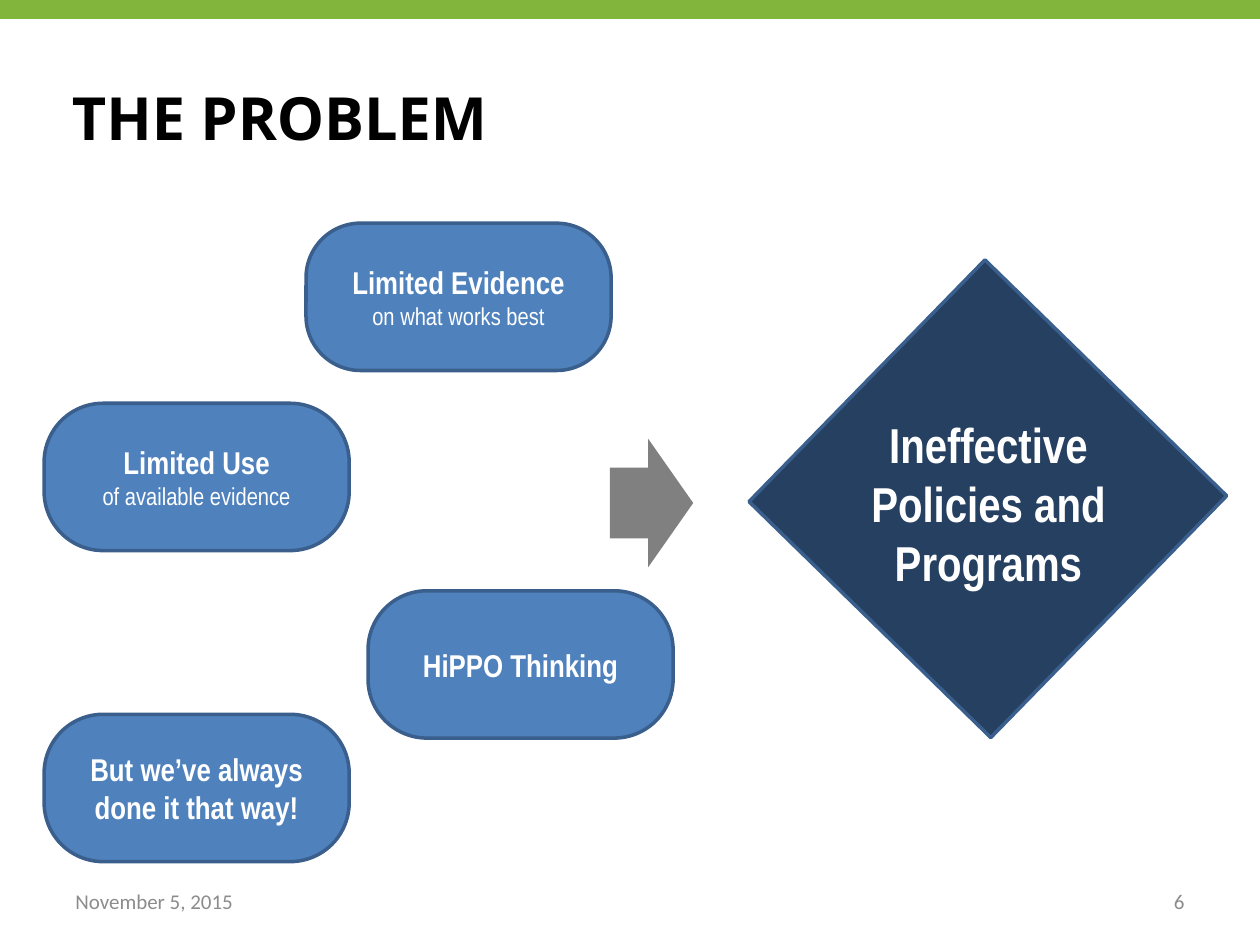
from pptx import Presentation
from pptx.dml.color import RGBColor
from pptx.enum.shapes import MSO_SHAPE
from pptx.enum.text import MSO_ANCHOR, PP_ALIGN
from pptx.util import Cm, Pt

RECTANGLE = MSO_SHAPE.RECTANGLE
ROUNDED = MSO_SHAPE.ROUNDED_RECTANGLE
DOWN_ARROW = MSO_SHAPE.DOWN_ARROW
LEFT, CENTER, RIGHT = PP_ALIGN.LEFT, PP_ALIGN.CENTER, PP_ALIGN.RIGHT
TOP, MIDDLE = MSO_ANCHOR.TOP, MSO_ANCHOR.MIDDLE

GREEN, BLUE, NAVY, OUTLINE = "81B53C", "4F81BD", "254061", "3A5F8C"
WHITE, BLACK, GRAY, FOOTER_GRAY = "FFFFFF", "000000", "808080", "8C8C8C"
NARROW = "Arial Narrow"

# All lengths are in centimetres.
SLIDE_SIZE = (25.4, 19.05)
CAUSE_SIZE = (6.15, 2.97)
# heading, detail, left, top, corner rounding
CAUSES = [
    ("Limited Evidence", "on what works best", 6.17, 4.5, 0.37),
    ("Limited Use", "of available evidence", 0.89, 8.13, 0.4),
    ("HiPPO Thinking", None, 7.42, 11.91, 0.4),
    ("But we’ve always done it that way!", None, 0.89, 14.4, 0.4),
]
RESULT = "Ineffective Policies and Programs"
# text, left, alignment
FOOTERS = [("November 5, 2015", 1.27, LEFT), ("6", 18.21, RIGHT)]


def rgb(color):
    return RGBColor.from_string(color)


def add_figure(slide, kind, box, fill, line=None):
    shape = slide.shapes.add_shape(kind, *map(Cm, box))
    shape.shadow.inherit = False
    shape.fill.solid()
    shape.fill.fore_color.rgb = rgb(fill)
    if line:
        shape.line.color.rgb = rgb(line)
        shape.line.width = Pt(2)
    else:
        shape.line.fill.background()
    return shape


def write(shape, lines, font, color, align, anchor=MIDDLE):
    """Fill a shape with one paragraph for each (text, size, bold) line."""
    frame = shape.text_frame
    frame.word_wrap = True
    frame.vertical_anchor = anchor
    for index, (text, size, bold) in enumerate(lines):
        paragraph = frame.add_paragraph() if index else frame.paragraphs[0]
        paragraph.alignment = align
        run = paragraph.add_run()
        run.text = text
        run.font.name = font
        run.font.size = Pt(size)
        run.font.bold = bold
        run.font.color.rgb = rgb(color)


def add_text(slide, box, *text_format):
    write(slide.shapes.add_textbox(*map(Cm, box)), *text_format)


def add_title(slide):
    title = slide.shapes.title
    title.left, title.top, title.width, title.height = map(Cm, (1.27, 0.76, 22.86, 3.18))
    frame = title.text_frame
    frame.margin_left = frame.margin_right = Cm(0.18)
    frame.margin_top = frame.margin_bottom = Cm(0.1)
    write(title, [("THE PROBLEM", 34, True)], "Open Sans", BLACK, LEFT)


def add_cause(slide, heading, detail, left, top, rounding):
    shape = add_figure(slide, ROUNDED, (left, top, *CAUSE_SIZE), BLUE, OUTLINE)
    shape.adjustments[0] = rounding
    lines = [(heading, 18, True)]
    if detail:
        lines.append((detail, 14, False))
    write(shape, lines, NARROW, WHITE, CENTER)


def main():
    presentation = Presentation()
    presentation.slide_width, presentation.slide_height = map(Cm, SLIDE_SIZE)
    slide = presentation.slides.add_slide(presentation.slide_layouts[5])

    add_figure(slide, RECTANGLE, (0, 0, SLIDE_SIZE[0], 0.38), GREEN)
    add_title(slide)
    for text, left, align in FOOTERS:
        add_text(slide, (left, 17.65, 5.92, 1.02), [(text, 12, False)],
                 "Calibri", FOOTER_GRAY, align)

    for cause in CAUSES:
        add_cause(slide, *cause)

    diamond = add_figure(slide, RECTANGLE, (16.51, 6.65, 6.81, 6.81), NAVY, OUTLINE)
    diamond.rotation = 44.3
    add_text(slide, (16.79, 8.23, 6.27, 3.84), [(RESULT, 28, True)],
             NARROW, WHITE, CENTER, TOP)

    arrow = add_figure(slide, DOWN_ARROW, (11.84, 9.3, 2.59, 1.68), GRAY)
    arrow.rotation = 270
    arrow.adjustments[0] = 0.55
    arrow.adjustments[1] = 0.54

    presentation.save("out.pptx")


if __name__ == "__main__":
    main()
